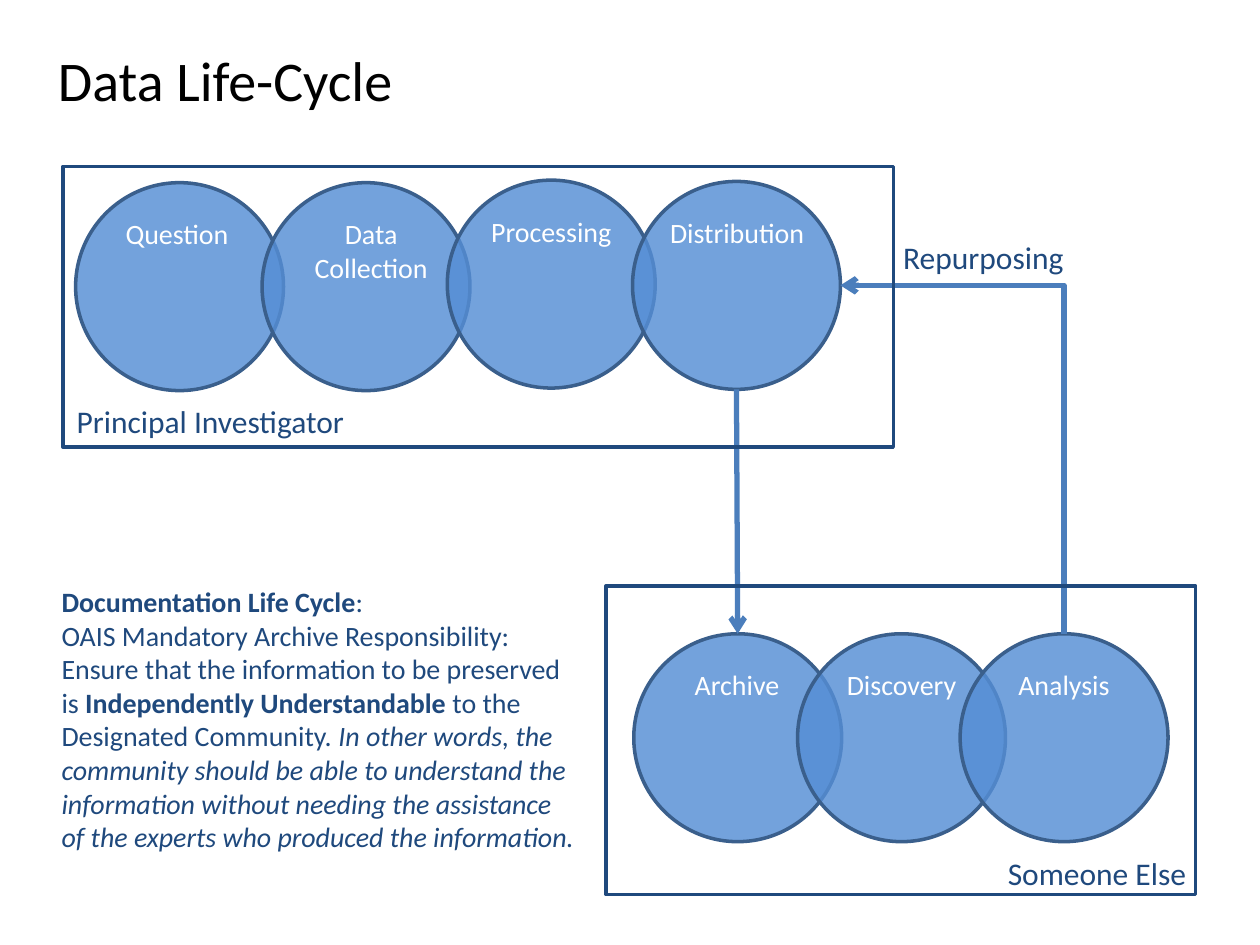
from lxml import etree
from pptx import Presentation
from pptx.dml.color import RGBColor
from pptx.enum import shapes, text
from pptx.oxml import ns
from pptx.util import Inches, Pt

FONT = "Calibri"
BLACK = RGBColor(0x00, 0x00, 0x00)
WHITE = RGBColor(0xFF, 0xFF, 0xFF)
NAVY = RGBColor(0x1F, 0x49, 0x7D)
CIRCLE_FILL = RGBColor(0x55, 0x8E, 0xD5)
CIRCLE_LINE = RGBColor(0x3A, 0x5F, 0x8C)
ARROW = RGBColor(0x4B, 0x7E, 0xBC)

# Content: paragraphs are lists of (text, style) runs
TITLE = "Data Life-Cycle"
DIAMETER = 1.65
LABEL_DROP = 0.22
# name: (circle left, circle top, label left, label width, label height)
STAGES = {
    "Question": (0.6, 1.45, 0.89, 1.03, 0.37),
    "Data\nCollection": (2.08, 1.45, 2.39, 1.11, 0.64),
    "Processing": (3.55, 1.43, 3.78, 1.19, 0.37),
    "Distribution": (5.02, 1.44, 5.21, 1.28, 0.37),
    "Archive": (5.03, 5.03, 5.4, 0.9, 0.37),
    "Discovery": (6.33, 5.03, 6.6, 1.11, 0.37),
    "Analysis": (7.62, 5.03, 7.98, 0.93, 0.37),
}
FRAMES = [(0.5, 1.32, 6.59, 2.23), (4.81, 4.65, 4.68, 2.45)]
CAPTIONS = [
    ("Repurposing", (7.07, 1.84, 1.49, 0.4)),
    ("Principal Investigator", (0.51, 3.14, 2.35, 0.4)),
    ("Someone Else", (7.9, 6.73, 1.64, 0.4)),
]
NOTE_BOX = (0.39, 4.59, 4.28, 2.52)
NOTE = [
    [("Documentation Life Cycle", "b"), (":", "")],
    [
        ("OAIS Mandatory Archive Responsibility: Ensure that the information "
         "to be preserved is ", ""),
        ("Independently Understandable ", "b"),
        ("to the Designated Community. ", ""),
        ("In other words, the community should be able to understand the "
         "information without needing the assistance of the experts who "
         "produced the information.", "i"),
    ],
]


def write(tf, content, size=16, color=NAVY, align=text.PP_ALIGN.LEFT, wrap=False):
    """Fill a text frame from a string or from paragraphs of styled runs."""
    if isinstance(content, str):
        content = [[(line, "")] for line in content.split("\n")]
    tf.word_wrap = wrap
    for i, runs in enumerate(content):
        p = tf.paragraphs[0] if i == 0 else tf.add_paragraph()
        p.alignment = align
        for words, style in runs:
            r = p.add_run()
            r.text = words
            r.font.name, r.font.size = FONT, Pt(size)
            r.font.color.rgb = color
            r.font.bold, r.font.italic = style == "b", style == "i"


def add_text(parent, box, content, **fmt):
    write(parent.add_textbox(*map(Inches, box)).text_frame, content, **fmt)


def add_outlined(parent, kind, box, color):
    sp = parent.add_shape(kind, *map(Inches, box))
    sp.shadow.inherit = False
    sp.line.color.rgb, sp.line.width = color, Pt(2)
    sp.fill.background()
    return sp


def add_stage(s, name, x, y, label_x, label_w, label_h):
    group = s.shapes.add_group_shape().shapes
    circle = add_outlined(group, shapes.MSO_SHAPE.OVAL,
                          (x, y, DIAMETER, DIAMETER), CIRCLE_LINE)
    circle.fill.solid()
    circle.fill.fore_color.rgb = CIRCLE_FILL
    rgb = circle._element.spPr.find(".//" + ns.qn("a:srgbClr"))
    etree.SubElement(rgb, ns.qn("a:alpha"), val="82000")
    add_text(group, (label_x, y + LABEL_DROP, label_w, label_h), name,
             color=WHITE, align=text.PP_ALIGN.CENTER)


def edge_point(name, across, down):
    """Point on a stage's circle, as fractions of its diameter."""
    x, y = STAGES[name][:2]
    return Inches(x + across * DIAMETER), Inches(y + down * DIAMETER)


def add_arrow(s, kind, start, end):
    c = s.shapes.add_connector(kind, *start, *end)
    c.line.color.rgb, c.line.width = ARROW, Pt(3)
    spPr = c._element.spPr
    etree.SubElement(spPr.find(ns.qn("a:ln")), ns.qn("a:tailEnd"), type="arrow")
    etree.SubElement(spPr, ns.qn("a:effectLst"))
    return c


def turn_up_then_left(c):
    """Make an elbow leave upwards and bend once: a quarter-turned preset."""
    mid_x, mid_y = c.left + c.width // 2, c.top + c.height // 2
    c.width, c.height = c.height, c.width
    c.left, c.top = mid_x - c.width // 2, mid_y - c.height // 2
    spPr = c._element.spPr
    spPr.find(ns.qn("a:prstGeom")).set("prst", "bentConnector2")
    xfrm = spPr.find(ns.qn("a:xfrm"))
    for key, value in (("rot", str(270 * 60000)), ("flipH", "0"), ("flipV", "1")):
        xfrm.set(key, value)


def main():
    prs = Presentation()
    prs.slide_width, prs.slide_height = Inches(10), Inches(7.5)
    s = prs.slides.add_slide(prs.slide_layouts[5])

    # Title
    title = s.shapes.title
    title.left, title.top, title.width, title.height = map(
        Inches, (0.36, 0.2, 5.89, 0.85))
    title.text_frame.vertical_anchor = text.MSO_ANCHOR.MIDDLE
    write(title.text_frame, TITLE, size=32, color=BLACK, wrap=True)

    # Stages and the arrows between the two groups
    for name, place in STAGES.items():
        add_stage(s, name, *place)
    kinds = shapes.MSO_CONNECTOR
    turn_up_then_left(add_arrow(s, kinds.ELBOW, edge_point("Analysis", 0.5, 0),
                                edge_point("Distribution", 1, 0.5)))
    add_arrow(s, kinds.STRAIGHT, edge_point("Distribution", 0.5, 1),
              edge_point("Archive", 0.5, 0))

    # Frames, captions and note
    for box in FRAMES:
        add_outlined(s.shapes, shapes.MSO_SHAPE.RECTANGLE, box, NAVY)
    for caption, box in CAPTIONS:
        add_text(s.shapes, box, caption, size=18)
    add_text(s.shapes, NOTE_BOX, NOTE, wrap=True)

    prs.save("out.pptx")


if __name__ == "__main__":
    main()
